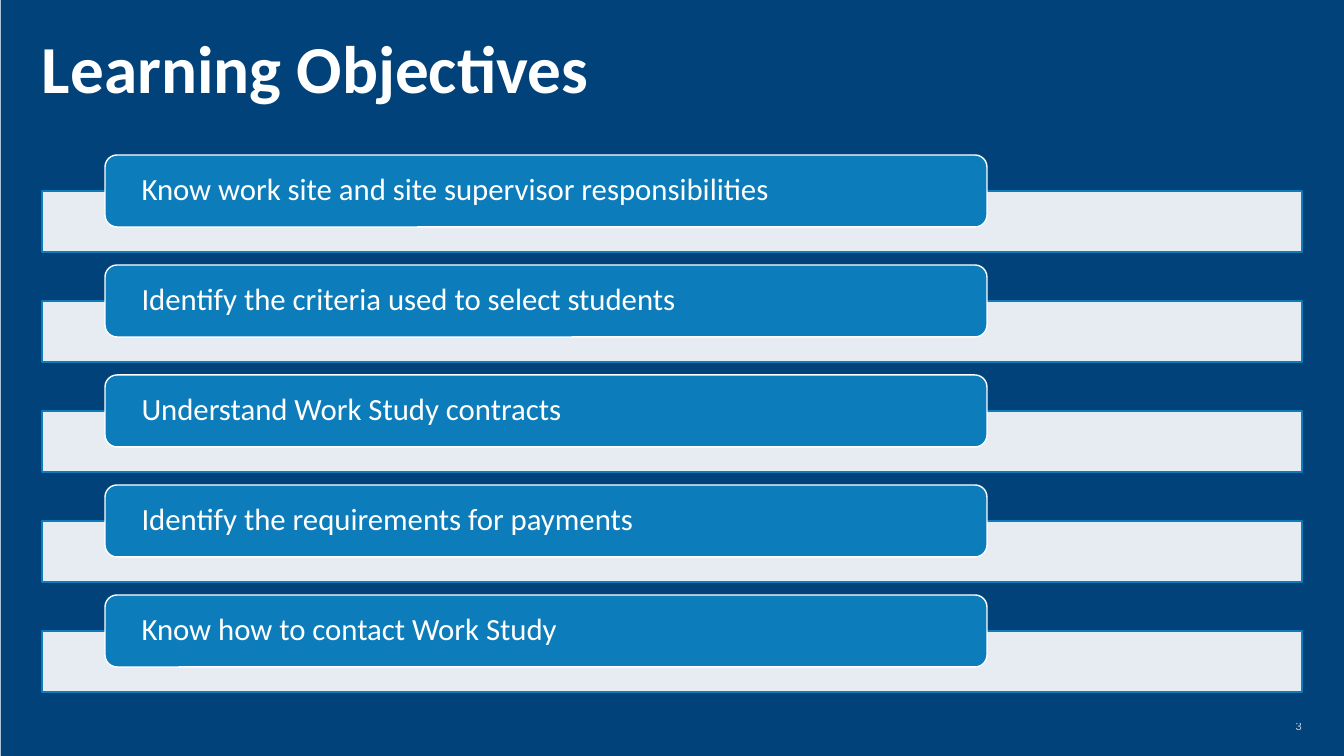
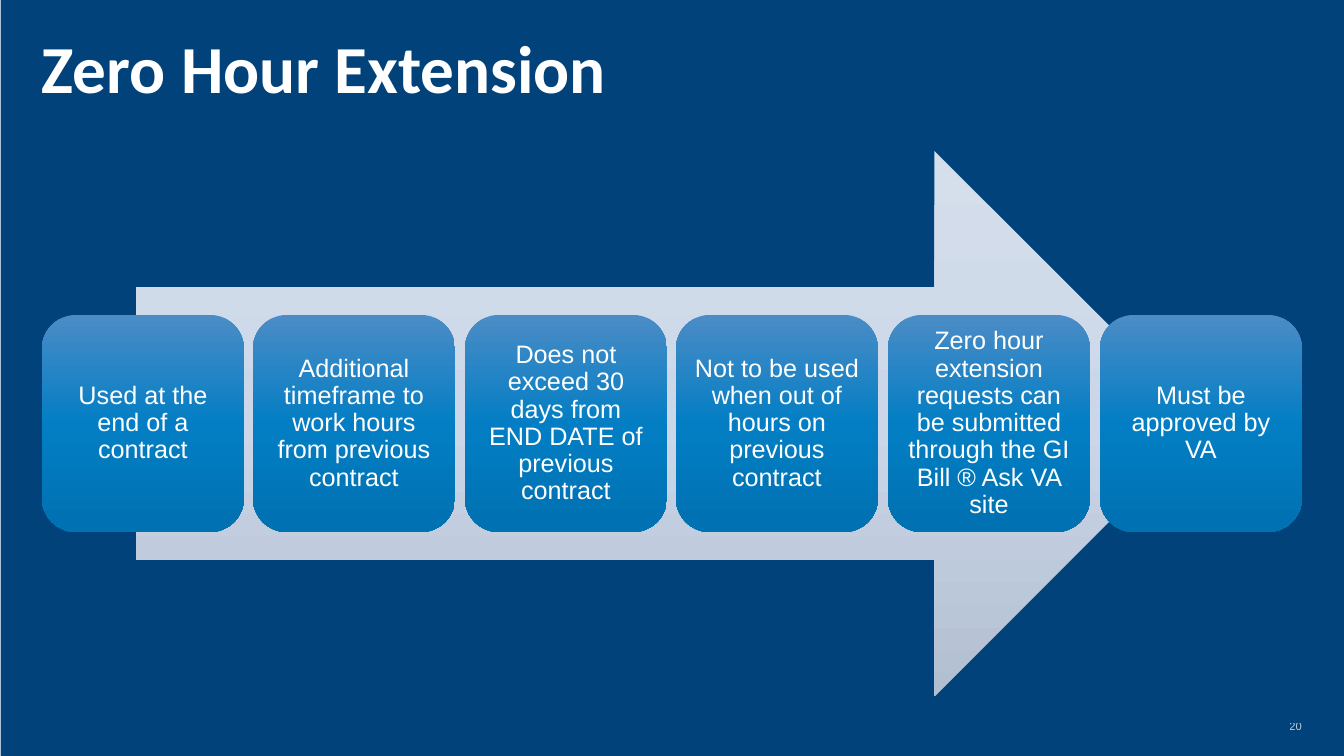
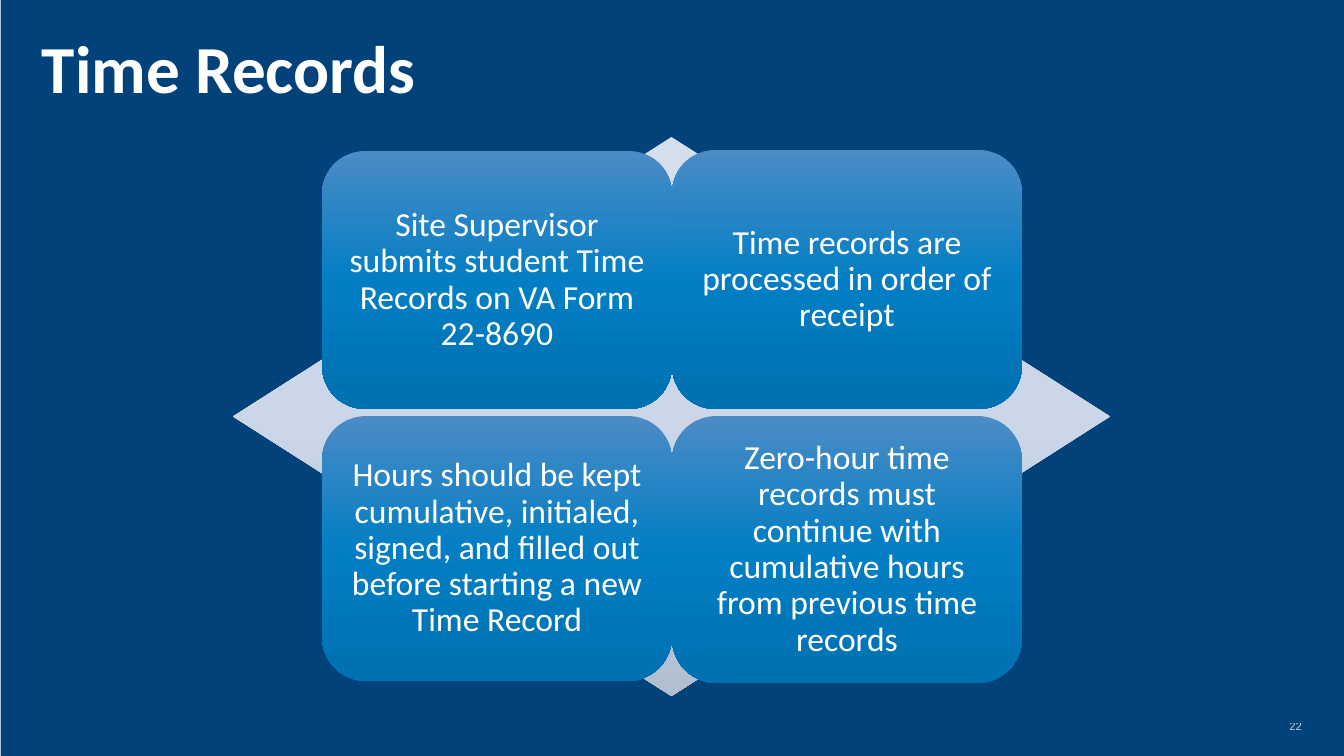
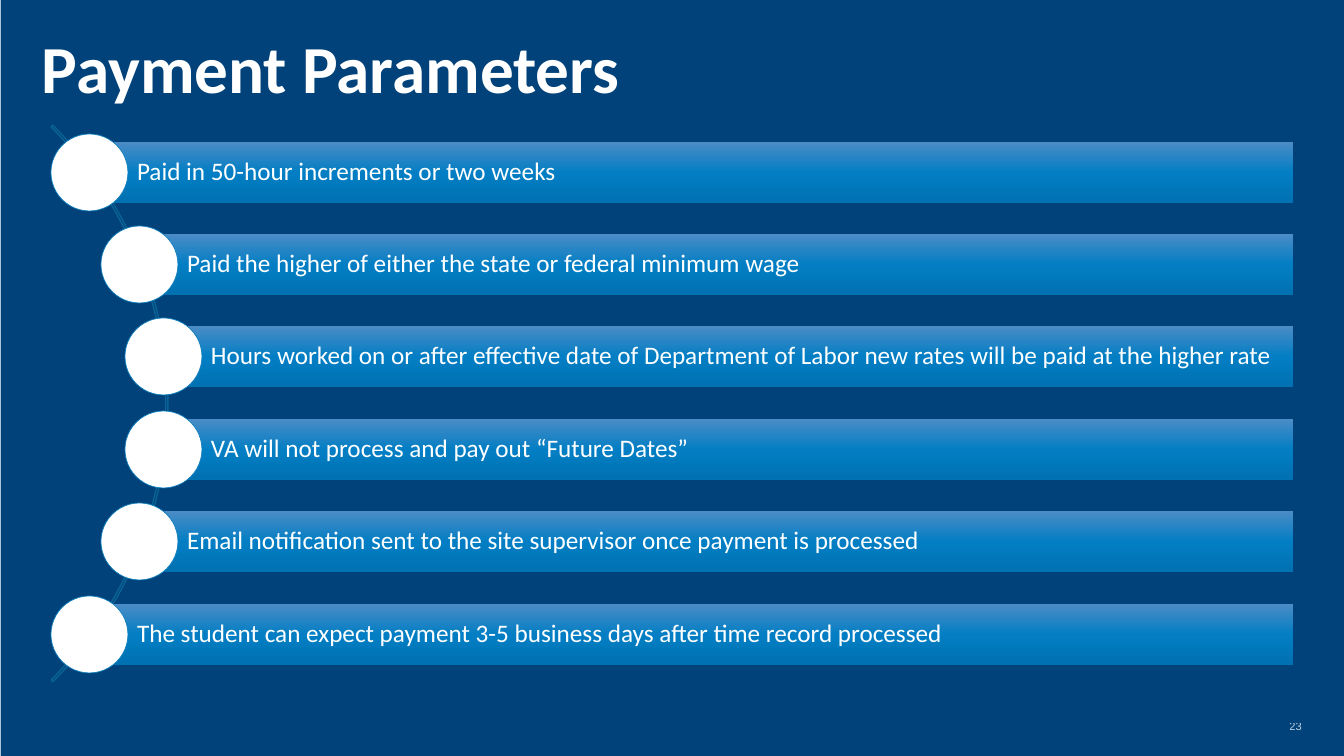
"""Build four Work Study training slides: objectives, extension, time records, payments."""
from copy import deepcopy

from lxml.etree import SubElement
from pptx import Presentation
from pptx.dml.color import RGBColor as RGB
from pptx.enum.shapes import MSO_SHAPE as SHAPE
from pptx.enum.text import MSO_ANCHOR as ANCHOR, PP_ALIGN as ALIGN
from pptx.oxml.ns import qn
from pptx.util import Pt

PX = 914400 / 100.8
COLORS = {
    "edge": "C7D7EB", "navy": "004279", "blue": "0C7CBB", "arc": "0A6396", "white": "FFFFFF",
    "blue_top": "4B8CC6", "blue_mid": "037EC4", "blue_low": "0071B1",
    "pale_top": "D5DEEB", "pale_mid": "CBD7E8", "pale_low": "B2BFD1",
}
BLUES = ["blue_top", "blue_mid", "blue_low"]
PALES = ["pale_top", "pale_mid", "pale_low"]


def add_block(s, kind, at, fill=None, line=None, weight=1):
    sp = s.shapes.add_shape(kind, *[round(v * PX) for v in at])
    sp.shadow.inherit = False
    if fill is None:
        sp.fill.background()
    elif isinstance(fill, list):
        sp.fill.gradient()
        sp.fill.gradient_angle = 270
        stops = sp._element.spPr.find(".//" + qn("a:gsLst"))
        stops.insert(1, deepcopy(stops[0]))
        for stop, name, position in zip(sp.fill.gradient_stops, fill, (0, 0.5, 1)):
            stop.color.rgb = RGB.from_string(COLORS[name])
            stop.position = position
    else:
        sp.fill.solid()
        sp.fill.fore_color.rgb = RGB.from_string(COLORS[fill])
    if line:
        sp.line.color.rgb = RGB.from_string(COLORS[line])
        sp.line.width = Pt(weight)
    else:
        sp.line.fill.background()
    return sp


def write(sp, text, size, font="Calibri", align=ALIGN.LEFT, insets=(0, 0, 0, 0),
          spacing=0.9, anchor=ANCHOR.MIDDLE):
    tf = sp.text_frame
    tf.word_wrap = True
    tf.vertical_anchor = anchor
    tf.margin_left, tf.margin_top, tf.margin_right, tf.margin_bottom = [round(v * PX) for v in insets]
    p = tf.paragraphs[0]
    p.alignment = align
    p.line_spacing = spacing
    r = p.add_run()
    r.text = text
    r.font.size = Pt(size)
    r.font.name = font
    r.font.color.rgb = RGB.from_string(COLORS["white"])
    return r


prs = Presentation()
prs.slide_width, prs.slide_height = round(1344 * PX), round(756 * PX)
blank = prs.slide_layouts[6]
blank.background.fill.solid()
blank.background.fill.fore_color.rgb = RGB.from_string(COLORS["edge"])

slides = []
for title, number in [("Learning Objectives", "3"), ("Zero Hour Extension", "20"),
                      ("Time Records", "22"), ("Payment Parameters", "23")]:
    s = prs.slides.add_slide(blank)
    add_block(s, SHAPE.RECTANGLE, (1, 0, 1343, 756), "navy")
    title_box = s.shapes.add_textbox(*[round(v * PX) for v in (42, 42, 1260, 109)])
    r = write(title_box, title, 48, spacing=0.8, anchor=ANCHOR.TOP)
    r.font.bold = True
    number_box = s.shapes.add_textbox(*[round(v * PX) for v in (1260, 715, 42, 23)])
    r = write(number_box, number, 8, "Arial", ALIGN.RIGHT, spacing=1.0)
    SubElement(r._r.find(".//" + qn("a:srgbClr")), qn("a:alpha"), val="75000")
    slides.append(s)
objectives, extension, records, payments = slides

for i, text in enumerate([
    "Know work site and site supervisor responsibilities",
    "Identify the criteria used to select students",
    "Understand Work Study contracts",
    "Identify the requirements for payments",
    "Know how to contact Work Study",
]):
    top = 155 + 110 * i
    bar = add_block(objectives, SHAPE.RECTANGLE, (42, top + 36, 1260, 61), "white", "blue")
    SubElement(bar._element.spPr.find(".//" + qn("a:srgbClr")), qn("a:alpha"), val="90000")
    pill = add_block(objectives, SHAPE.ROUNDED_RECTANGLE, (105, top, 882, 72), "blue", "white")
    write(pill, text, 22, insets=(33, 0, 33, 0))

add_block(extension, SHAPE.RIGHT_ARROW, (136, 151, 1071, 545), PALES)
for i, text in enumerate([
    "Used at the end of a contract",
    "Additional timeframe to work hours from previous contract",
    "Does not exceed 30 days from END DATE of previous contract",
    "Not to be used when out of hours on previous contract",
    "Zero hour extension requests can be submitted through the GI Bill ® Ask VA site",
    "Must be approved by VA",
]):
    step = add_block(extension, SHAPE.ROUNDED_RECTANGLE, (42 + 1058 * i // 5, 315, 202, 217), BLUES)
    write(step, text, 18, "Arial", ALIGN.CENTER, (7, 7, 7, 7))

add_block(records, SHAPE.DIAMOND, (233, 137, 877, 559), PALES)
for left, top, height, text in [
    (322, 151, 258, "Site Supervisor submits student Time Records on VA Form 22-8690"),
    (672, 150, 259, "Time records are processed in order of receipt"),
    (322, 416, 265, "Hours should be kept cumulative, initialed, signed, and filled out "
                    "before starting a new Time Record"),
    (672, 416, 267, "Zero-hour time records must continue with cumulative hours "
                    "from previous time records"),
]:
    card = add_block(records, SHAPE.ROUNDED_RECTANGLE, (left, top, 350, height), BLUES)
    write(card, text, 24, align=ALIGN.CENTER, insets=(10, 10, 10, 10))

arc = add_block(payments, SHAPE.BLOCK_ARC, (-619, 10, 787, 787), line="arc")
for i, value in enumerate((189, 27, 0.003)):
    arc.adjustments[i] = value
for i, (center, text) in enumerate([
    (89, "Paid in 50-hour increments or two weeks"),
    (139, "Paid the higher of either the state or federal minimum wage"),
    (163, "Hours worked on or after effective date of Department of Labor new rates "
          "will be paid at the higher rate"),
    (163, "VA will not process and pay out “Future Dates”"),
    (139, "Email notification sent to the site supervisor once payment is processed"),
    (89, "The student can expect payment 3-5 business days after time record processed"),
]):
    top = 142 + 462 * i // 5
    band = add_block(payments, SHAPE.RECTANGLE, (center, top, 1293 - center, 61), BLUES)
    write(band, text, 18, insets=(48, 5, 5, 5))
    add_block(payments, SHAPE.OVAL, (center - 38, top - 8, 77, 77), "white", "blue", 0.5)

prs.save("out.pptx")
